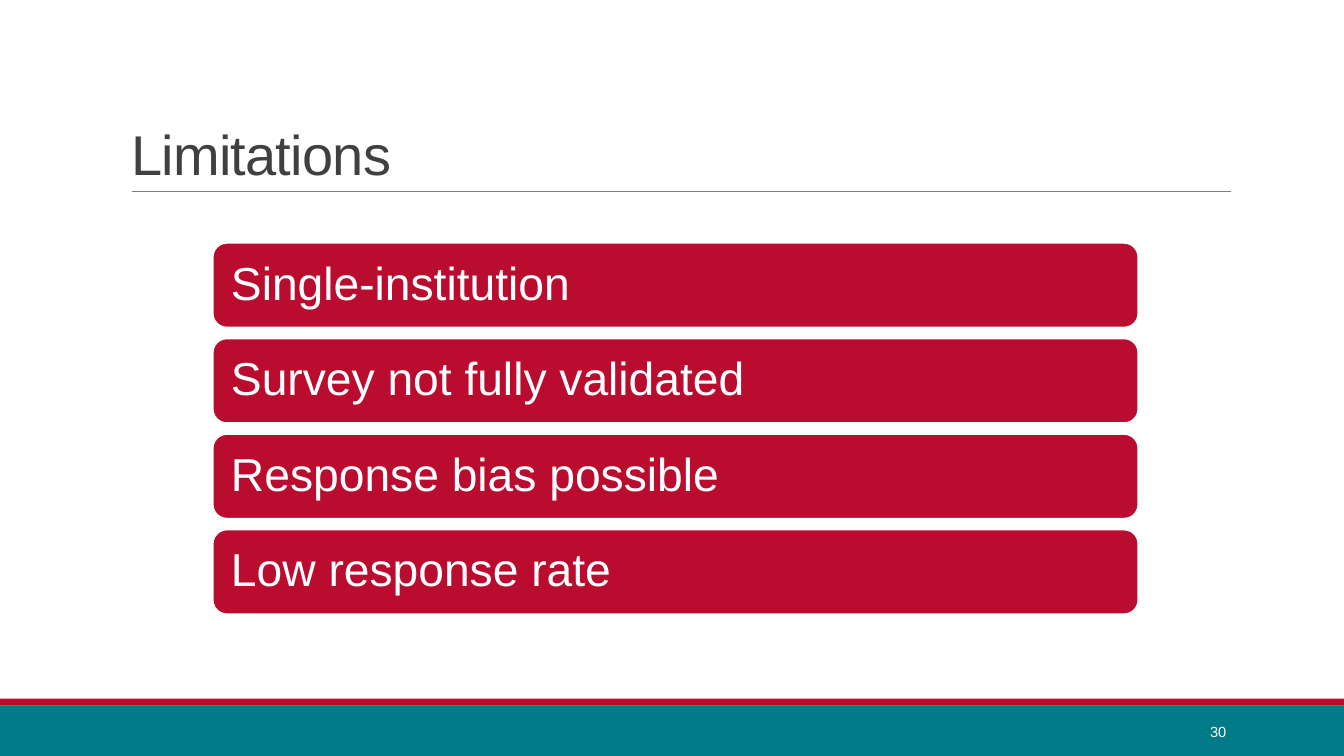
from lxml import etree
from pptx import Presentation
from pptx.dml.color import RGBColor
from pptx.enum.shapes import MSO_CONNECTOR, MSO_SHAPE
from pptx.enum.text import MSO_ANCHOR, MSO_AUTO_SIZE, PP_ALIGN
from pptx.oxml.ns import qn
from pptx.util import Inches, Pt

RECT, ROUND = MSO_SHAPE.RECTANGLE, MSO_SHAPE.ROUNDED_RECTANGLE
STRAIGHT = MSO_CONNECTOR.STRAIGHT
MIDDLE, BOTTOM = MSO_ANCHOR.MIDDLE, MSO_ANCHOR.BOTTOM
LEFT, RIGHT = PP_ALIGN.LEFT, PP_ALIGN.RIGHT
FIXED = MSO_AUTO_SIZE.NONE

COLORS = {"teal": "007A86", "red": "BA0C2F", "rule": "808080",
          "title": "404040", "white": "FFFFFF"}
LIMITS = ["Single-institution", "Survey not fully validated",
          "Response bias possible", "Low response rate"]


class Deck:
    font = "Arial"

    def __init__(self):
        self.prs = Presentation()
        self.prs.slide_width = Inches(13.33)
        self.prs.slide_height = Inches(7.5)
        self.slide = self.prs.slides.add_slide(self.prs.slide_layouts[5])
        self.shapes = self.slide.shapes

    def color(self, name):
        return RGBColor.from_string(COLORS[name])

    def area(self, x, y, width, height):
        wide, high = self.prs.slide_width, self.prs.slide_height
        return [round(share * size / 100) for share, size in
                ((x, wide), (y, high), (width, wide), (height, high))]

    def letter(self, shape, text, size, color, align=LEFT, anchor=MIDDLE, lead=1.0):
        frame = shape.text_frame
        frame.text = text
        frame.word_wrap = True
        frame.auto_size = FIXED
        frame.vertical_anchor = anchor
        para = frame.paragraphs[0]
        para.alignment = align
        para.line_spacing = lead
        run = para.runs[0]
        run.font.name = self.font
        run.font.size = Pt(size)
        run.font.color.rgb = self.color(color)
        return run

    def title(self, text, *box):
        shape = self.shapes.title
        shape.left, shape.top, shape.width, shape.height = self.area(*box)
        run = self.letter(shape, text, 40, "title", anchor=BOTTOM, lead=0.85)
        run.font._element.set("spc", "-50")

    def block(self, kind, color, *box):
        shape = self.shapes.add_shape(kind, *self.area(*box))
        shape.shadow.inherit = False
        shape.fill.solid()
        shape.fill.fore_color.rgb = self.color(color)
        shape.line.fill.background()
        return shape

    def card(self, text, *box):
        shape = self.block(ROUND, "red", *box)
        shape.line.color.rgb = self.color("white")
        shape.line.width = Pt(1.25)
        frame = shape.text_frame
        frame.margin_left = frame.margin_right = Inches(0.14)
        frame.margin_top = frame.margin_bottom = Inches(0.14)
        self.letter(shape, text, 33, "white", lead=0.9)

    def rule(self, start, end, y):
        x, top, width, _ = self.area(start, y, end - start, 0)
        line = self.shapes.add_connector(STRAIGHT, x, top, x + width, top)
        line.line.color.rgb = self.color("rule")
        line.line.width = Pt(0.5)
        etree.SubElement(line._element.spPr, qn("a:effectLst"))

    def label(self, text, *box):
        shape = self.shapes.add_textbox(*self.area(*box))
        self.letter(shape, text, 10.5, "white", align=RIGHT)


def main():
    deck = Deck()
    deck.block(RECT, "teal", 0, 93.33, 100, 6.67)
    deck.block(RECT, "red", 0, 92.4, 100, 0.93)
    deck.rule(9.83, 91.6, 25.33)
    deck.title("Limitations", 9, 4.13, 82.5, 21.2)
    for row, text in enumerate(LIMITS):
        deck.card(text, 15.83, 32.13 + 12.64 * row, 68.87, 11.2)
    deck.label("30", 81.25, 94.13, 10.73, 5.33)
    deck.prs.save("out.pptx")


if __name__ == "__main__":
    main()
